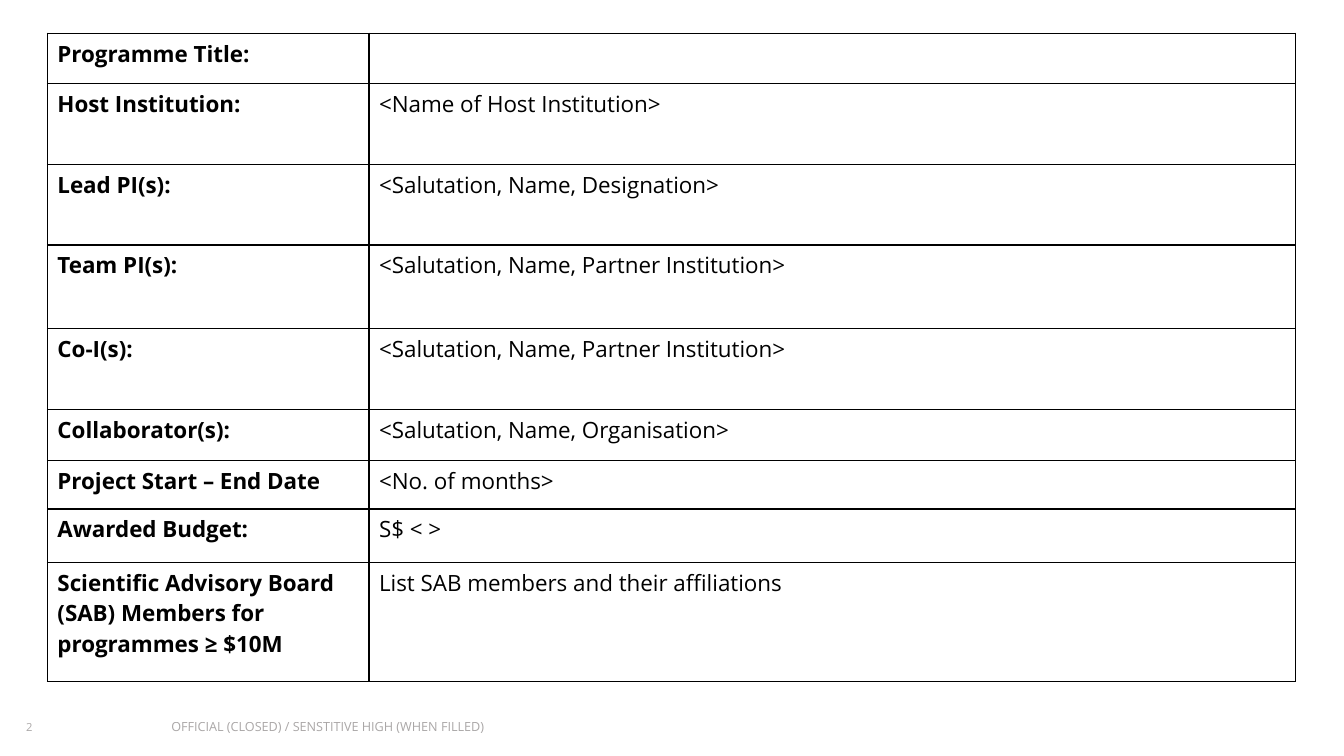
"""Build the programme details slide with its form table and footer."""
import pptx
import pptx.dml.color
import pptx.oxml
import pptx.oxml.ns
import pptx.util
from lxml import etree
from pptx.util import Inches

ROWS = [
    ("Programme Title:", "", 0.5),
    ("Host Institution:", "<Name of Host Institution>", 0.8),
    ("Lead PI(s):", "<Salutation, Name, Designation>", 0.8),
    ("Team PI(s):", "<Salutation, Name, Partner Institution>", 0.83),
    ("Co-I(s):", "<Salutation, Name, Partner Institution>", 0.8),
    ("Collaborator(s):", "<Salutation, Name, Organisation>", 0.51),
    ("Project Start – End Date", "<No. of months>", 0.48),
    ("Awarded Budget:", "S$ < >", 0.53),
    ("Scientific Advisory Board (SAB) Members for programmes ≥ $10M",
     "List SAB members and their affiliations", 1.18),
]
COLUMNS = (3.19, 9.19)


def color(value):
    return pptx.dml.color.RGBColor.from_string(value)


def add_text(tf, text, size=16, fill="000000", bold=False, alpha=None,
             font="Open Sans", line_spacing=None):
    p = tf.paragraphs[0]
    p.line_spacing = line_spacing
    p.font.size = pptx.util.Pt(size)
    if not text:
        return
    r = p.add_run()
    r.text = text
    r.font.name = font
    r.font.size = pptx.util.Pt(size)
    r.font.bold = bold
    r.font.color.rgb = color(fill)
    if alpha is not None:
        rgb = r.font.fill._xPr.find(".//" + pptx.oxml.ns.qn("a:srgbClr"))
        etree.SubElement(rgb, pptx.oxml.ns.qn("a:alpha"), val=str(alpha * 1000))


class FormSlide:
    ink = "000000"
    muted = "767171"
    muted_alpha = 61
    border_width = 1

    def __init__(self, prs):
        self.s = prs.slides.add_slide(prs.slide_layouts[6])

    def footer(self, text, left, width, size, bottom=0, line_spacing=None):
        sp = self.s.shapes.add_textbox(Inches(left), Inches(7.13), Inches(width), Inches(0.19))
        tf = sp.text_frame
        tf.word_wrap = True
        tf.margin_left = tf.margin_right = tf.margin_top = 0
        tf.margin_bottom = Inches(bottom)
        add_text(tf, text, size=size, fill=self.muted, alpha=self.muted_alpha,
                 line_spacing=line_spacing)

    def border(self, cell):
        tcPr = cell._tc.get_or_add_tcPr()
        for side in ("lnL", "lnR", "lnT", "lnB"):
            tcPr.append(pptx.oxml.parse_xml(
                f'<a:{side} {pptx.oxml.ns.nsdecls("a")} w="{pptx.util.Pt(self.border_width)}">'
                f'<a:solidFill><a:srgbClr val="{self.ink}"/></a:solidFill></a:{side}>'))

    def table(self, rows, columns, left, top):
        height = sum(row[-1] for row in rows)
        frame = self.s.shapes.add_table(len(rows), len(columns), Inches(left), Inches(top),
                                        Inches(sum(columns)), Inches(height))
        table = frame.table
        table.first_row = table.horz_banding = False
        for column, width in zip(table.columns, columns):
            column.width = Inches(width)
        for row, (label, value, row_height) in zip(table.rows, rows):
            row.height = Inches(row_height)
            for cell, text, bold in zip(row.cells, (label, value), (True, False)):
                self.border(cell)
                cell.fill.background()
                add_text(cell.text_frame, text, fill=self.ink, bold=bold)


def main():
    prs = pptx.Presentation()
    prs.slide_width = Inches(13.33)
    prs.slide_height = Inches(7.5)
    form = FormSlide(prs)
    form.footer("2", 0.26, 0.79, 8, line_spacing=1.1)
    form.footer("OFFICIAL (CLOSED) / SENSTITIVE HIGH (WHEN FILLED)", 1.7, 5.33, 9, bottom=0.05)
    form.table(ROWS, COLUMNS, 0.47, 0.33)
    prs.save("out.pptx")


if __name__ == "__main__":
    main()
